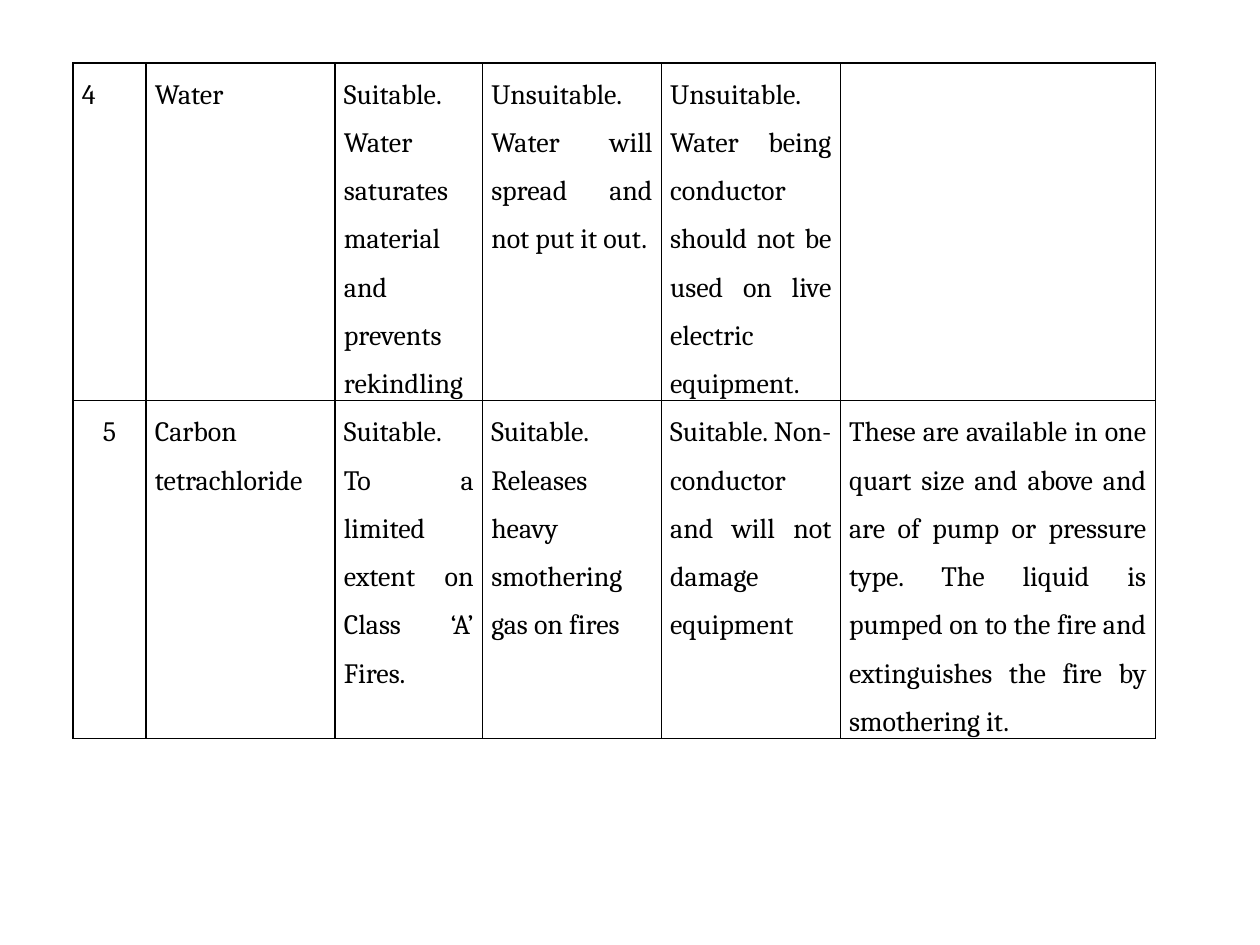
from lxml.etree import SubElement
from pptx import Presentation
from pptx.dml.color import RGBColor
from pptx.enum.text import PP_ALIGN
from pptx.oxml.ns import qn
from pptx.util import Inches, Pt

ROWS = [
    ["4", "Water",
     "Suitable. Water saturates material and prevents rekindling",
     "Unsuitable. Water will spread and not put it out.",
     "Unsuitable. Water being conductor should not be used on live electric equipment.",
     ""],
    ["5", "Carbon tetrachloride",
     "Suitable. To a limited extent on Class ‘A’ Fires.",
     "Suitable. Releases heavy smothering gas on fires",
     "Suitable. Non- conductor and will not damage equipment",
     "These are available in one quart size and above and are of pump or pressure type. "
     "The liquid is pumped on to the fire and extinguishes the fire by smothering it."],
]
COL_WIDTHS = [0.58, 1.5, 1.17, 1.42, 1.42, 2.5]
ROW_HEIGHT = 2.68
LEFT, TOP = 0.58, 0.5
BLACK, WHITE = "000000", "FFFFFF"
MARGINS = {"margin_left": 0.07, "margin_right": 0.07, "margin_top": 0, "margin_bottom": 0}
FONT = {"name": "Cambria", "size": Pt(16), "bold": False}


def color(hex_value):
    return RGBColor.from_string(hex_value)


def add_borders(cell, hex_value, width):
    tc_pr = cell._tc.get_or_add_tcPr()
    for i, side in enumerate(("lnL", "lnR", "lnT", "lnB")):
        line = SubElement(tc_pr, qn(f"a:{side}"), w=str(Pt(width)))
        fill = SubElement(line, qn("a:solidFill"))
        SubElement(fill, qn("a:srgbClr"), val=hex_value)
        tc_pr.insert(i, line)  # borders come before the cell fill


def format_cell(cell, text, align):
    cell.fill.solid()
    cell.fill.fore_color.rgb = color(WHITE)
    add_borders(cell, BLACK, 1)
    for name, value in MARGINS.items():
        setattr(cell, name, Inches(value))
    p = cell.text_frame.paragraphs[0]
    p.alignment = align
    p.line_spacing = 1.5
    if text:
        r = p.add_run()
        r.text = text
        for name, value in FONT.items():
            setattr(r.font, name, value)
        r.font.color.rgb = color(BLACK)


prs = Presentation()
prs.slide_width, prs.slide_height = Inches(10), Inches(7.5)
s = prs.slides.add_slide(prs.slide_layouts[6])

table = s.shapes.add_table(
    len(ROWS), len(COL_WIDTHS), Inches(LEFT), Inches(TOP),
    Inches(sum(COL_WIDTHS)), Inches(ROW_HEIGHT * len(ROWS))).table
table.first_row = table.horz_banding = False
for column, width in zip(table.columns, COL_WIDTHS):
    column.width = Inches(width)
for i, texts in enumerate(ROWS):
    table.rows[i].height = Inches(ROW_HEIGHT)
    for j, text in enumerate(texts):
        align = PP_ALIGN.CENTER if text == "5" else PP_ALIGN.JUSTIFY
        format_cell(table.cell(i, j), text, align)

prs.save("out.pptx")
